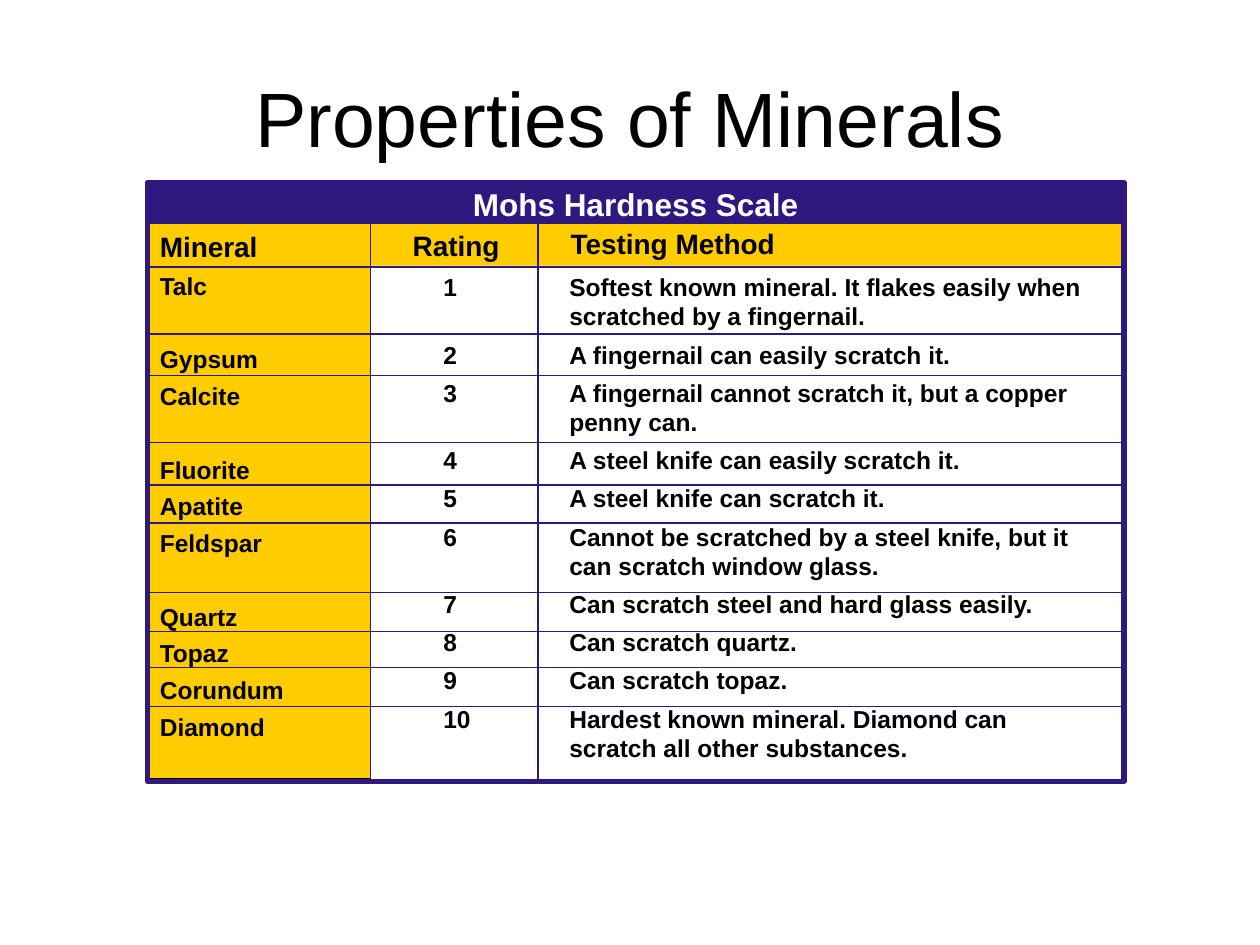
from dataclasses import dataclass

from pptx import Presentation
from pptx.dml.color import RGBColor
from pptx.enum.shapes import MSO_CONNECTOR, MSO_SHAPE
from pptx.enum.text import MSO_ANCHOR, PP_ALIGN
from pptx.oxml.ns import qn
from pptx.util import Inches, Pt
from lxml.etree import SubElement


@dataclass(frozen=True)
class Theme:
    font: str = "Arial"
    ink: RGBColor = RGBColor(0, 0, 0)
    paper: RGBColor = RGBColor(255, 255, 255)
    gold: RGBColor = RGBColor(0xFF, 0xCC, 0x00)
    indigo: RGBColor = RGBColor(0x2F, 0x18, 0x80)
    title: int = 44
    banner: int = 18
    heading: int = 16
    body: int = 14
    rule: float = 0.75
    frame: int = 3


@dataclass(frozen=True)
class Box:
    left: float
    top: float
    width: float
    height: float

    def inner(self, left, top, width, height):
        return Box(self.left + left, self.top + top, width, height)

    def lengths(self):
        return [Inches(n) for n in (self.left, self.top, self.width, self.height)]


THEME = Theme()
MINERALS = [
    ("Talc", "Softest known mineral. It flakes easily when scratched by a fingernail."),
    ("Gypsum", "A fingernail can easily scratch it."),
    ("Calcite", "A fingernail cannot scratch it, but a copper penny can."),
    ("Fluorite", "A steel knife can easily scratch it."),
    ("Apatite", "A steel knife can scratch it."),
    ("Feldspar", "Cannot be scratched by a steel knife, but it can scratch window glass."),
    ("Quartz", "Can scratch steel and hard glass easily."),
    ("Topaz", "Can scratch quartz."),
    ("Corundum", "Can scratch topaz."),
    ("Diamond", "Hardest known mineral. Diamond can scratch all other substances."),
]
TWO_LINE_ROWS = {"Talc", "Calcite", "Feldspar"}
ROW_RULES = [0.67, 1.2, 1.53, 2.06, 2.4, 2.7, 3.25, 3.56, 3.85, 4.16]
COLUMN_RULES = [1.77, 3.1]


def add_panel(page, box, fill=None, line=None, width=THEME.rule):
    panel = page.shapes.add_shape(MSO_SHAPE.RECTANGLE, *box.lengths())
    panel.shadow.inherit = False
    if fill is None:
        panel.fill.background()
    else:
        panel.fill.solid()
        panel.fill.fore_color.rgb = fill
    if line is None:
        panel.line.fill.background()
    else:
        panel.line.color.rgb = line
        panel.line.width = Pt(width)
    return panel


def add_text_box(page, box, wrap=True):
    frame = page.shapes.add_textbox(*box.lengths()).text_frame
    frame.word_wrap = wrap
    return frame


def add_para(frame, text, size, color=THEME.ink, bold=True, align=PP_ALIGN.LEFT, spacing=None):
    para = frame.paragraphs[0]
    if para.runs:
        para = frame.add_paragraph()
    para.alignment = align
    para.line_spacing = spacing
    span = para.add_run()
    span.text = text
    span.font.name = THEME.font
    span.font.size = Pt(size)
    span.font.bold = bold
    span.font.color.rgb = color
    return para


def add_rule(page, left, top, right, bottom):
    rule = page.shapes.add_connector(
        MSO_CONNECTOR.STRAIGHT, *(Inches(n) for n in (left, top, right, bottom)))
    rule.line.color.rgb = THEME.indigo
    rule.line.width = Pt(THEME.rule)
    SubElement(rule._element.spPr, qn("a:effectLst"))


def add_title(page, box):
    frame = add_text_box(page, box)
    frame.vertical_anchor = MSO_ANCHOR.MIDDLE
    add_para(frame, "Properties of Minerals", THEME.title, bold=False, align=PP_ALIGN.CENTER)


def add_banner(page, box):
    frame = add_panel(page, box, THEME.indigo).text_frame
    frame.word_wrap = False
    frame.vertical_anchor = MSO_ANCHOR.MIDDLE
    add_para(frame, "Mohs Hardness Scale", THEME.banner, THEME.paper, align=PP_ALIGN.CENTER)


def add_mineral_names(page, box):
    frame = add_text_box(page, box)
    add_para(frame, "Mineral", THEME.heading, spacing=1.25)
    for name, _ in MINERALS:
        para = add_para(frame, name, THEME.body, spacing=1.25)
        if name in TWO_LINE_ROWS:
            para.space_after = Pt(21)


def add_testing_methods(page, box):
    frame = add_text_box(page, box)
    for rating, (_, method) in enumerate(MINERALS, 1):
        para = add_para(frame, f"{rating}\t{method}", THEME.body)
        properties = para._p.get_or_add_pPr()
        properties.set("marL", str(Inches(1)))
        properties.set("indent", str(-Inches(1)))
        if rating > 1:
            para.space_before = Pt(5)


def add_rules(page, box):
    right, bottom = box.left + box.width, box.top + box.height
    for offset in ROW_RULES:
        add_rule(page, box.left, box.top + offset, right, box.top + offset)
    for offset in COLUMN_RULES:
        add_rule(page, box.left + offset, box.top + 0.33, box.left + offset, bottom - 0.02)


def add_hardness_scale(page, box):
    add_panel(page, box.inner(0.01, 0.31, 1.76, 4.42), THEME.gold, THEME.ink)
    add_banner(page, box.inner(0, 0, box.width, 0.33))
    add_panel(page, box.inner(0, 0.33, box.width, 0.33), THEME.gold)
    add_mineral_names(page, box.inner(0, 0.26, 1.95, 4.23))
    rating = add_text_box(page, box.inner(1.91, 0.25, 1.08, 0.44))
    add_para(rating, "Rating", THEME.heading, align=PP_ALIGN.CENTER, spacing=1.25)
    add_testing_methods(page, box.inner(2.25, 0.66, 5.29, 4.09))
    add_panel(page, box, line=THEME.indigo, width=THEME.frame)
    method = add_text_box(page, box.inner(3.25, 0.3, 1.84, 0.37), wrap=False)
    add_para(method, "Testing Method", THEME.heading, align=PP_ALIGN.CENTER)
    add_rules(page, box)


def main():
    deck = Presentation()
    deck.slide_width, deck.slide_height = Inches(10), Inches(7.5)
    page = deck.slides.add_slide(deck.slide_layouts[6])
    add_title(page, Box(0.5, 0.3, 9, 1.25))
    add_hardness_scale(page, Box(1.17, 1.45, 7.75, 4.75))
    deck.save("out.pptx")


if __name__ == "__main__":
    main()
